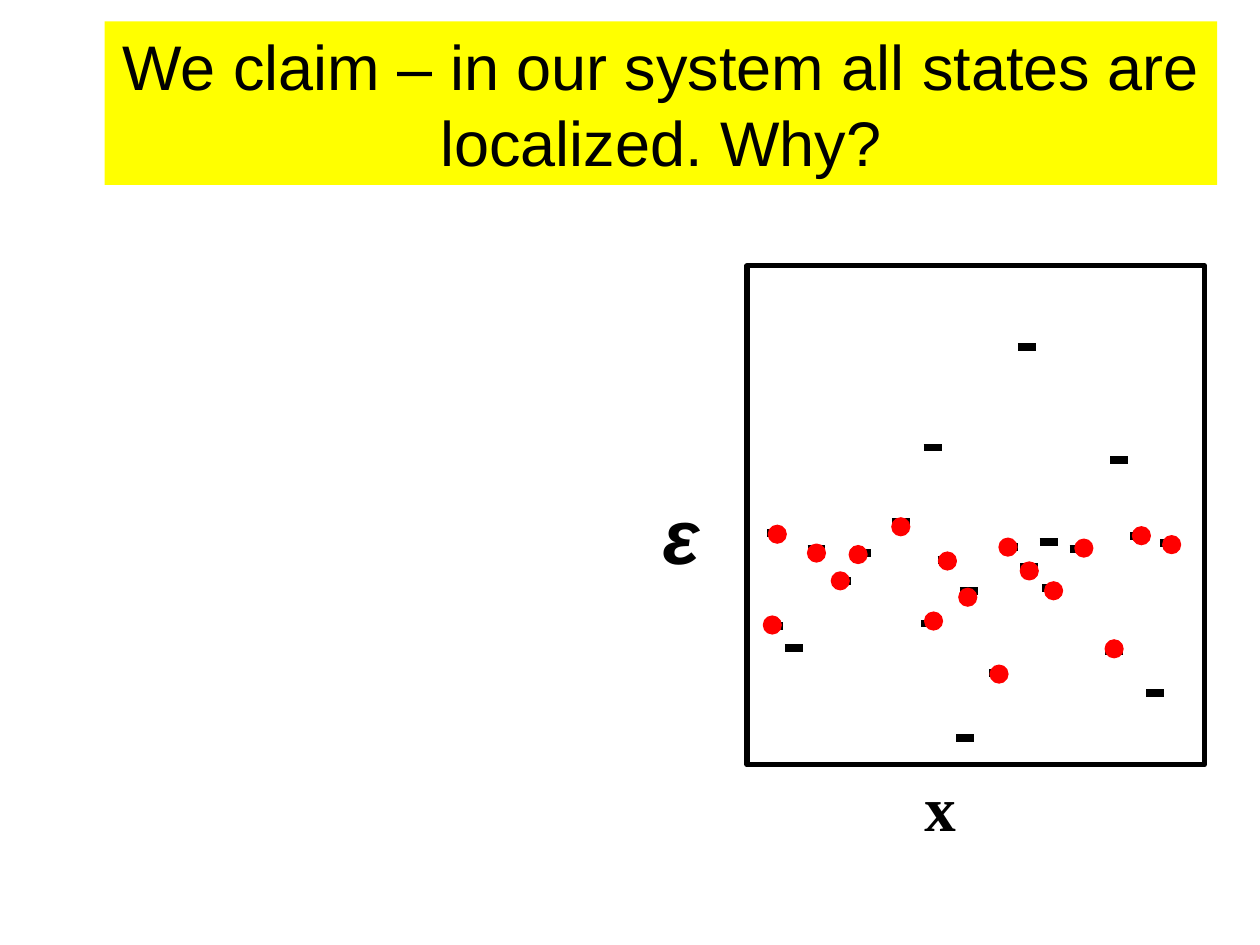
from dataclasses import dataclass
from typing import Any

from lxml import etree
from pptx import Presentation
from pptx import util as u
from pptx.dml.color import RGBColor
from pptx.enum import shapes, text
from pptx.oxml import ns

BLACK, WHITE, RED, YELLOW = "000000", "FFFFFF", "FF0000", "FFFF00"
DASH, DOT = 0.36, 0.36
LEVELS = [
    (15.42, 12.62), (15.82, 13.06), (16.28, 11.07), (16.79, 11.71),
    (15.47, 10.74), (17.2, 11.15), (17.98, 10.52), (18.62, 9.02),
    (19.28, 14.88), (18.57, 12.57), (18.9, 11.28), (19.35, 11.91),
    (20.52, 6.99), (19.94, 13.56), (20.17, 11.02), (20.57, 11.43),
    (21.01, 11.86), (21.56, 11.07), (20.96, 10.92), (22.28, 13.13),
    (22.38, 9.27), (23.11, 13.97), (23.39, 10.95), (22.78, 10.8),
]
FILLED = [
    (15.39, 12.42), (15.49, 10.59), (23.44, 10.8), (16.28, 10.97),
    (16.76, 11.53), (17.12, 11), (17.98, 10.44), (18.64, 12.34),
    (18.92, 11.13), (19.33, 11.86), (19.96, 13.41), (20.14, 10.85),
    (20.57, 11.33), (21.06, 11.73), (21.67, 10.87), (22.83, 10.62),
    (22.28, 12.9),
]


def paint(ink, tone):
    ink.rgb = RGBColor.from_string(tone)


@dataclass
class Pen:
    """Draws styled elements on the current slide, with lengths in centimetres."""

    slide: Any
    font: str = "Arial"
    ink: str = BLACK

    def shape(self, kind, box, fill, line=None, width=0.75):
        item = self.slide.shapes.add_shape(kind, *map(u.Cm, box))
        item.shadow.inherit = False
        item.fill.solid()
        paint(item.fill.fore_color, fill)
        if line:
            paint(item.line.color, line)
            item.line.width = u.Pt(width)
        else:
            item.line.fill.background()
        return item

    def letter(self, item, words, size, align, font=None, bold=False, slant=False):
        frame = item.text_frame
        frame.word_wrap = True
        frame.vertical_anchor = text.MSO_ANCHOR.TOP
        para = frame.paragraphs[0]
        para.alignment = align
        run = para.add_run()
        run.text = words
        face = run.font
        face.name = font or self.font
        face.size = u.Pt(size)
        face.bold, face.italic = bold, slant
        paint(face.color, self.ink)

    def label(self, box, words, size, align, **style):
        item = self.slide.shapes.add_textbox(*map(u.Cm, box))
        self.letter(item, words, size, align, bold=True, **style)

    def dash(self, left, top):
        ends = map(u.Cm, (left, top, left + DASH, top))
        item = self.slide.shapes.add_connector(shapes.MSO_CONNECTOR.STRAIGHT, *ends)
        paint(item.line.color, self.ink)
        item.line.width = u.Pt(4.5)
        etree.SubElement(item.element.spPr, ns.qn("a:effectLst"))


def main():
    deck = Presentation()
    deck.slide_width, deck.slide_height = u.Cm(25.4), u.Cm(19.05)
    pen = Pen(deck.slides.add_slide(deck.slide_layouts[6]))
    rect, oval = shapes.MSO_SHAPE.RECTANGLE, shapes.MSO_SHAPE.OVAL
    left, center = text.PP_ALIGN.LEFT, text.PP_ALIGN.CENTER

    title = pen.shape(rect, (2.11, 0.43, 22.43, 3.3), YELLOW)
    claim = "We claim – in our system all states are localized. Why?"
    pen.letter(title, claim, 36, center)

    pen.label((17.45, 15.37, 3, 1.78), "x", 36, center, font="Times New Roman")
    pen.label((13.11, 9.7, 3, 2.11), "ε", 44, left, slant=True)
    pen.shape(rect, (15.06, 5.36, 9.22, 10.06), WHITE, BLACK, 3)

    for spot in LEVELS:
        pen.dash(*spot)
    for spot in FILLED:
        pen.shape(oval, (*spot, DOT, DOT), RED, RED)

    deck.save("out.pptx")


if __name__ == "__main__":
    main()
